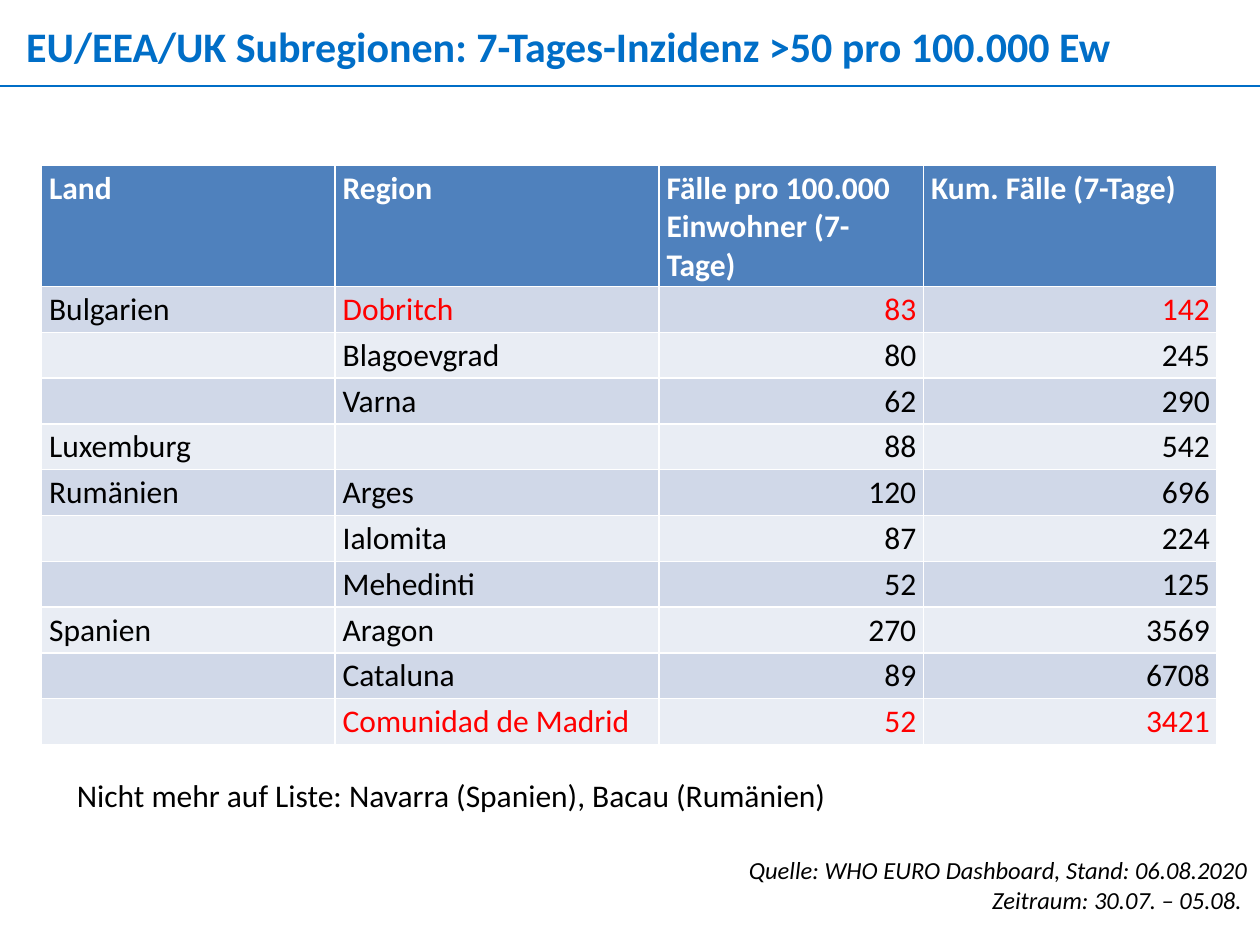
from dataclasses import dataclass

import pptx
import pptx.dml.color
import pptx.enum.shapes
import pptx.enum.text
import pptx.oxml.ns
import pptx.util
from lxml import etree

Cm = pptx.util.Cm
Pt = pptx.util.Pt
RGB = pptx.dml.color.RGBColor.from_string
ALIGN = pptx.enum.text.PP_ALIGN


@dataclass(frozen=True)
class Theme:
    font: str = "Calibri"
    blue: str = "006EC7"
    text: str = "000000"
    alert: str = "FF0000"
    header: str = "4F81BD"
    header_text: str = "FFFFFF"
    bands: tuple = ("D0D8E8", "E9EDF4")
    title_size: int = 24
    body_size: int = 18
    source_size: int = 14


THEME = Theme()

HEADINGS = ("Land", "Region", "Fälle pro 100.000 Einwohner (7-Tage)", "Kum. Fälle (7-Tage)")
REGIONS = (
    ("Bulgarien", "Dobritch", 83, 142),
    ("", "Blagoevgrad", 80, 245),
    ("", "Varna", 62, 290),
    ("Luxemburg", "", 88, 542),
    ("Rumänien", "Arges", 120, 696),
    ("", "Ialomita", 87, 224),
    ("", "Mehedinti", 52, 125),
    ("Spanien", "Aragon", 270, 3569),
    ("", "Cataluna", 89, 6708),
    ("", "Comunidad de Madrid", 52, 3421),
)
HIGHLIGHTED = ("Dobritch", "Comunidad de Madrid")
COLUMN_SHARES = (2.33, 2.57, 2.1, 2.33)


def style(p, size, color, align=ALIGN.LEFT, bold=False, italic=False):
    p.alignment = align
    p.font.name = THEME.font
    p.font.size = Pt(size)
    p.font.color.rgb = RGB(color)
    p.font.bold = bold
    p.font.italic = italic


def add_text(s, box, lines, size, color, **look):
    tf = s.shapes.add_textbox(*map(Cm, box)).text_frame
    tf.word_wrap = True
    tf.text = "\n".join(lines)
    for p in tf.paragraphs:
        style(p, size, color, **look)
    return tf


def add_title(s, box, text):
    left, top, width, height = box
    inset = 0.53
    tf = add_text(s, (left + inset, top + 0.41, width - 0.94, 1.02), [text],
                  THEME.title_size, THEME.blue, bold=True)
    tf.margin_left = tf.margin_right = tf.margin_top = tf.margin_bottom = 0
    rule_y = top + height
    rule = s.shapes.add_connector(pptx.enum.shapes.MSO_CONNECTOR.STRAIGHT,
                                  Cm(left), Cm(rule_y), Cm(left + width), Cm(rule_y))
    rule.line.color.rgb = RGB(THEME.blue)
    rule.line.width = Pt(1.5)
    etree.SubElement(rule._element.spPr, pptx.oxml.ns.qn("a:effectLst"))


def fill_cell(cell, value, fill, color, bold=False):
    cell.fill.solid()
    cell.fill.fore_color.rgb = RGB(fill)
    cell.margin_left = cell.margin_right = Cm(0.15)
    cell.margin_top = cell.margin_bottom = Cm(0.08)
    cell.text = str(value)
    align = ALIGN.RIGHT if isinstance(value, int) else ALIGN.LEFT
    style(cell.text_frame.paragraphs[0], THEME.body_size, color, align, bold)


def add_incidence_table(s, box):
    left, top, width, height = box
    header_height = 2.42
    row_height = (height - header_height) / len(REGIONS)
    table = s.shapes.add_table(len(REGIONS) + 1, len(HEADINGS), *map(Cm, box)).table
    for column, share in zip(table.columns, COLUMN_SHARES):
        column.width = Cm(width * share / sum(COLUMN_SHARES))
    table.rows[0].height = Cm(header_height)
    for c, heading in enumerate(HEADINGS):
        fill_cell(table.cell(0, c), heading, THEME.header, THEME.header_text, bold=True)
    for r, region in enumerate(REGIONS):
        table.rows[r + 1].height = Cm(row_height)
        for c, value in enumerate(region):
            alert = c > 0 and region[1] in HIGHLIGHTED
            fill_cell(table.cell(r + 1, c), value, THEME.bands[r % 2],
                      THEME.alert if alert else THEME.text)


def add_note(s, box):
    add_text(s, box, ["Nicht mehr auf Liste: Navarra (Spanien), Bacau (Rumänien)"],
             THEME.body_size, THEME.text)


def add_source(s, box):
    add_text(s, box, ["Quelle: WHO EURO Dashboard, Stand: 06.08.2020", "Zeitraum: 30.07. – 05.08. "],
             THEME.source_size, THEME.text, align=ALIGN.RIGHT, italic=True)


def main():
    prs = pptx.Presentation()
    prs.slide_width = Cm(25.4)
    prs.slide_height = Cm(19.05)
    s = prs.slides.add_slide(prs.slide_layouts[6])
    add_title(s, (0, 0, 25.4, 1.73), "EU/EEA/UK Subregionen: 7-Tages-Inzidenz >50 pro 100.000 Ew")
    add_source(s, (4.65, 17.12, 20.75, 1.45))
    add_incidence_table(s, (0.84, 3.33, 23.7, 11.53))
    add_note(s, (1.3, 15.52, 16.79, 1.02))
    prs.save("out.pptx")


if __name__ == "__main__":
    main()
